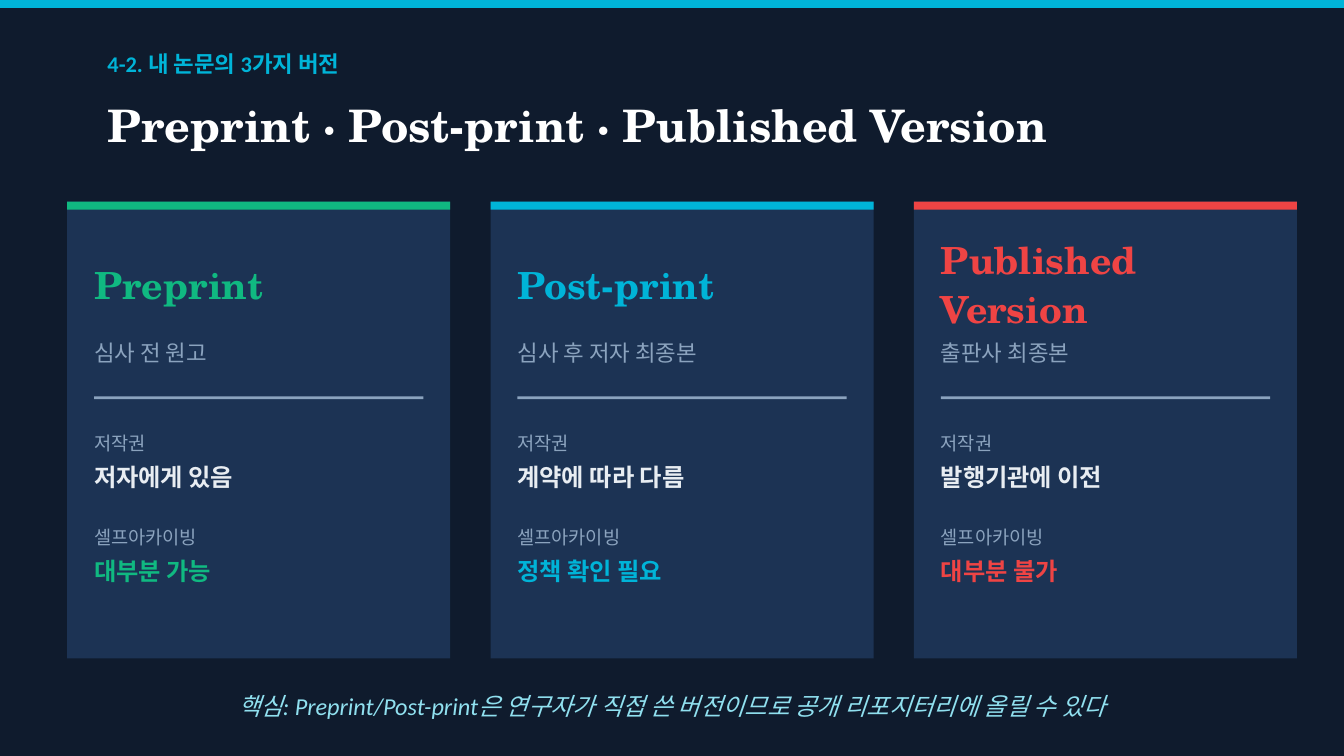
from dataclasses import dataclass

from pptx import Presentation
from pptx.dml.color import RGBColor as Rgb
from pptx.enum.shapes import MSO_SHAPE as Shape
from pptx.enum.text import MSO_ANCHOR as Anchor, PP_ALIGN as Align
from pptx.util import Inches, Pt

CELL = 0.1  # side of a grid cell in inches


@dataclass(frozen=True)
class Theme:
    back: str = "0F1B2D"
    card: str = "1C3354"
    cyan: str = "00B4D8"
    green: str = "10B981"
    red: str = "EF4444"
    white: str = "FFFFFF"
    pale: str = "E8EDF2"
    mute: str = "8BA3BE"
    ice: str = "90E0EF"
    serif: str = "TeX Gyre Schola"
    sans: str = "Calibri"
    title: int = 24
    head: int = 20
    body: int = 13
    sub: int = 12
    label: int = 10


def write(frame, text, *, size, color, font, bold=False, slant=False,
          align=None, space=None):
    """Fill a text frame, one paragraph for each line of text."""
    for n, line in enumerate(text.split("\n")):
        para = frame.add_paragraph() if n else frame.paragraphs[0]
        para.alignment = align
        para.line_spacing = space
        run = para.add_run()
        run.text = line
        run.font.size = Pt(size)
        run.font.name = font
        run.font.bold = bold
        run.font.italic = slant
        run.font.color.rgb = Rgb.from_string(color)


class Deck:
    def __init__(self, theme):
        self.theme = theme
        self.file = Presentation()
        self.file.slide_width = Inches(10)
        self.file.slide_height = Inches(10) * 9 // 16
        self.slide = self.file.slides.add_slide(self.file.slide_layouts[6])
        fill = self.slide.background.fill
        fill.solid()
        fill.fore_color.rgb = Rgb.from_string(theme.back)

    def place(self, *cells):
        return [Inches(n * CELL) for n in cells]

    def rect(self, col, row, cols, rows, color):
        box = self.slide.shapes.add_shape(
            Shape.RECTANGLE, *self.place(col, row, cols, rows))
        box.shadow.inherit = False
        box.fill.solid()
        box.fill.fore_color.rgb = Rgb.from_string(color)
        box.line.fill.background()

    def text(self, col, row, cols, rows, words, **style):
        box = self.slide.shapes.add_textbox(
            *self.place(col, row, cols, rows))
        frame = box.text_frame
        frame.word_wrap = True
        frame.vertical_anchor = Anchor.MIDDLE
        frame.margin_left = frame.margin_right = 0
        frame.margin_top = frame.margin_bottom = 0
        write(frame, words, **{"font": self.theme.sans, **style})

    def card(self, col, color, name, stage, owner, share):
        look = self.theme
        self.rect(col, 15, 28.5, 34, look.card)
        self.rect(col, 15, 28.5, 0.6, color)
        left, wide = col + 2, 24.5
        self.text(left, 17.5, wide, 7, name, size=look.head, color=color,
                  font=look.serif, bold=True, space=1.1)
        self.text(left, 24.5, wide, 3.5, stage, size=look.sub,
                  color=look.mute)
        self.rect(left, 29.5, wide, 0.2, look.mute)
        facts = [("저작권", owner, look.pale), ("셀프아카이빙", share, color)]
        for n, (label, value, tint) in enumerate(facts):
            row = 31.5 + 7 * n
            self.text(left, row, wide, 3, label, size=look.label,
                      color=look.mute)
            self.text(left, row + 2.5, wide, 3, value, size=look.body,
                      color=tint, bold=True)


def main():
    look = Theme()
    deck = Deck(look)
    deck.rect(0, 0, 100, 0.6, look.cyan)
    deck.text(8, 3, 50, 3.5, "4-2. 내 논문의 3가지 버전", size=look.sub,
              color=look.cyan, bold=True)
    deck.text(8, 6.5, 84, 5.5, "Preprint · Post-print · Published Version",
              size=look.title, color=look.white, font=look.serif, bold=True)

    cards = [
        (look.green, "Preprint", "심사 전 원고", "저자에게 있음", "대부분 가능"),
        (look.cyan, "Post-print", "심사 후 저자 최종본", "계약에 따라 다름",
         "정책 확인 필요"),
        (look.red, "Published\nVersion", "출판사 최종본", "발행기관에 이전",
         "대부분 불가"),
    ]
    for n, card in enumerate(cards):
        deck.card(5 + 31.5 * n, *card)

    deck.text(8, 50.5, 84, 4,
              "핵심: Preprint/Post-print은 연구자가 직접 쓴 버전이므로 "
              "공개 리포지터리에 올릴 수 있다",
              size=look.body, color=look.ice, slant=True, align=Align.CENTER)
    deck.file.save("out.pptx")


if __name__ == "__main__":
    main()
